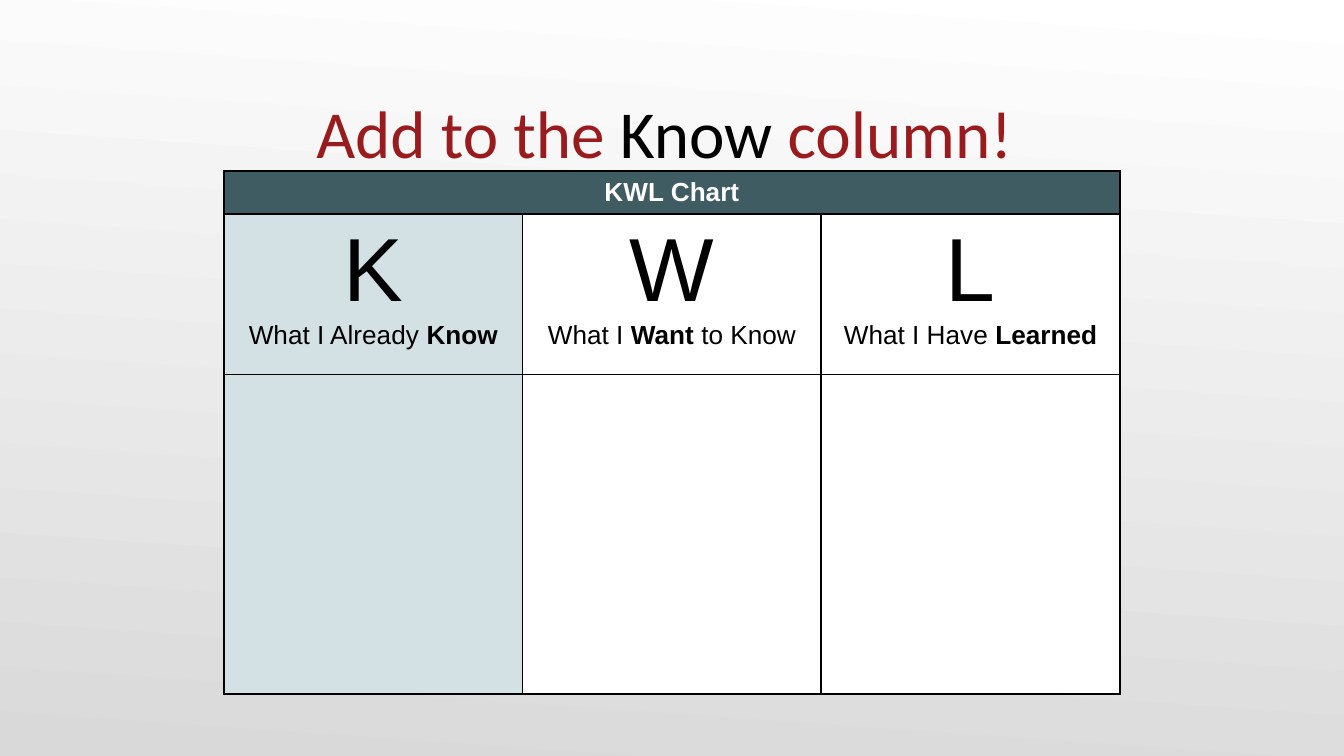
from lxml import etree
from pptx import Presentation
from pptx.dml.color import RGBColor
from pptx.enum.text import MSO_ANCHOR, MSO_AUTO_SIZE, PP_ALIGN
from pptx.oxml.ns import qn
from pptx.util import Pt

CENTER = PP_ALIGN.CENTER
BOTTOM = MSO_ANCHOR.BOTTOM
NO_AUTOFIT = MSO_AUTO_SIZE.NONE
TITLE_ONLY = 5

# Content: runs are (text, colour) in the title, (text, bold) in the table
TITLE = [("Add to the ", "991B1E"), ("Know ", "000000"), ("column! ", "991B1E")]
HEADER = "KWL Chart"
COLUMNS = [
    ("K", [("What I Already ", False), ("Know", True)], "D4E1E4"),
    ("W", [("What I ", False), ("Want", True), (" to Know", False)], "FFFFFF"),
    ("L", [("What I Have ", False), ("Learned", True)], "FFFFFF"),
]
COL_WIDTH = 160
ROW_HEIGHTS = [23, 86, 171]


def rgb(color):
    return RGBColor.from_string(color)


def add_run(p, text, size, color="000000", bold=False, font="Arial"):
    r = p.add_run()
    r.text = text
    r.font.name, r.font.size, r.font.bold = font, Pt(size), bold
    r.font.color.rgb = rgb(color)


def style_cell(cell, fill):
    tc_pr = cell._tc.get_or_add_tcPr()
    for side in ("lnL", "lnR", "lnT", "lnB"):
        ln = etree.SubElement(tc_pr, qn(f"a:{side}"), w=str(Pt(1)))
        solid = etree.SubElement(ln, qn("a:solidFill"))
        etree.SubElement(solid, qn("a:srgbClr"), val="000000")
    cell.fill.solid()
    cell.fill.fore_color.rgb = rgb(fill)


prs = Presentation()
prs.slide_width, prs.slide_height = Pt(720), Pt(405)
s = prs.slides.add_slide(prs.slide_layouts[TITLE_ONLY])

# Background gradient
bg = s.background.fill
bg.gradient()
bg.gradient_angle = 360 - 94
for stop, (position, color) in zip(bg.gradient_stops, [(0, "FFFFFF"), (1, "D9D9D9")]):
    stop.position = position
    stop.color.rgb = rgb(color)

# Title
title = s.shapes.title
title.left, title.top, title.width, title.height = Pt(36), Pt(24.5), Pt(648), Pt(67.5)
tf = title.text_frame
tf.word_wrap, tf.auto_size, tf.vertical_anchor = True, NO_AUTOFIT, BOTTOM
tf.margin_left = tf.margin_right = tf.margin_bottom = 0
tf.margin_top = Pt(3.6)
p = tf.paragraphs[0]
p.alignment = CENTER
for text, color in TITLE:
    add_run(p, text, 36, color, font="Calibri")

# KWL table
table = s.shapes.add_table(
    len(ROW_HEIGHTS), len(COLUMNS), Pt(120), Pt(91.7),
    Pt(COL_WIDTH * len(COLUMNS)), Pt(sum(ROW_HEIGHTS))).table
for row, height in zip(table.rows, ROW_HEIGHTS):
    row.height = Pt(height)
for c, (letter, caption, fill) in enumerate(COLUMNS):
    table.columns[c].width = Pt(COL_WIDTH)
    for r, cell_fill in enumerate(["3E5C61", fill, fill]):
        style_cell(table.cell(r, c), cell_fill)
    tf = table.cell(1, c).text_frame
    p = tf.paragraphs[0]
    p.alignment = CENTER
    add_run(p, letter, 48)
    p = tf.add_paragraph()
    p.alignment = CENTER
    for text, bold in caption:
        add_run(p, text, 14, bold=bold)

# Header across all columns
header = table.cell(0, 0)
header.merge(table.cell(0, len(COLUMNS) - 1))
p = header.text_frame.paragraphs[0]
p.alignment = CENTER
add_run(p, HEADER, 14, "FFFFFF", bold=True)

prs.save("out.pptx")
